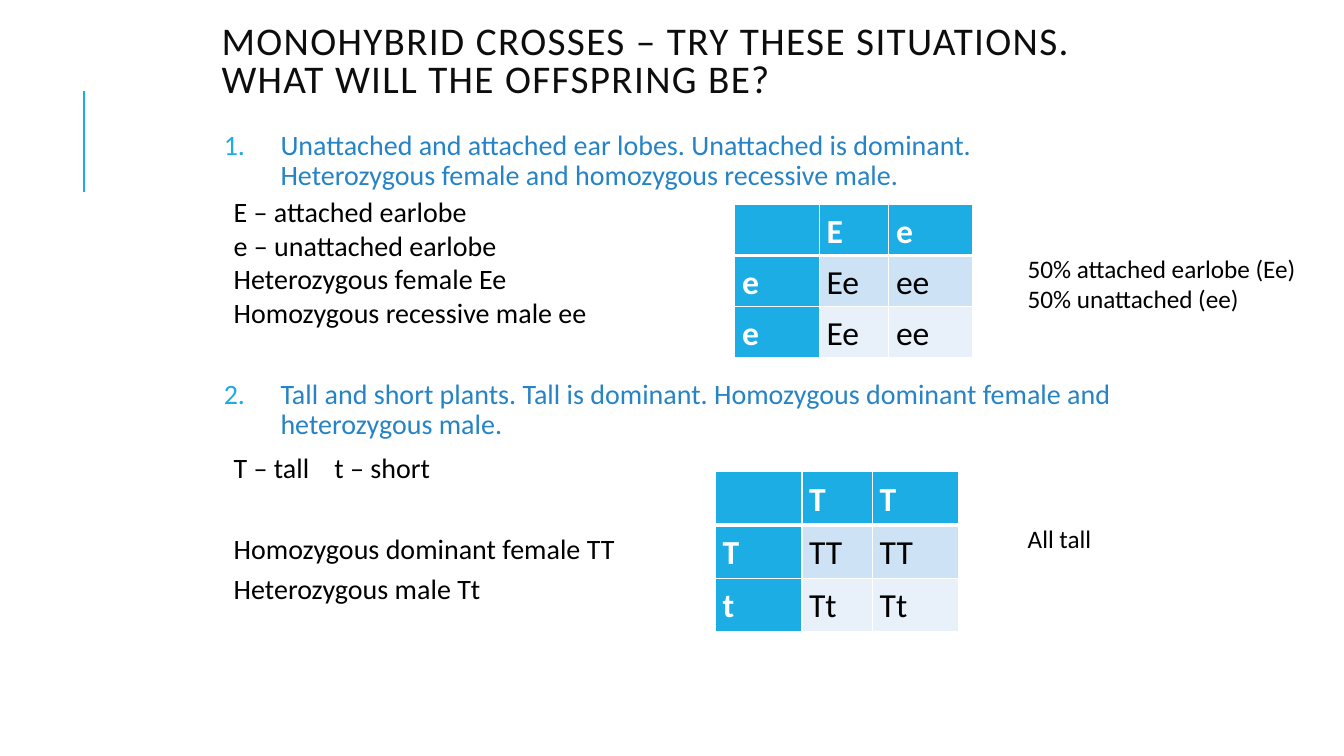
"""Build a slide of two monohybrid cross exercises with Punnett squares."""
import pptx
import pptx.dml.color
import pptx.enum.shapes
import pptx.enum.text
import pptx.oxml
import pptx.oxml.ns
import pptx.util
from pptx.util import Cm, Pt

FONT = "Calibri"
BLUE, DEEP, BLACK, WHITE = "1CADE4", "2683C6", "000000", "FFFFFF"
BANDS = ["CDE3F5", "E8F1FA"]
TITLE = "MONOHYBRID CROSSES – TRY THESE SITUATIONS. WHAT WILL THE OFFSPRING BE?"

# (question, space before, answer line height, [(answer, space before)])
TASKS = [
    ("Unattached and attached ear lobes. Unattached is dominant. "
     "Heterozygous female and homozygous recessive male.", 12, 1.0,
     [("E – attached earlobe", 0), ("e – unattached earlobe", 0),
      ("Heterozygous female Ee", 0), ("Homozygous recessive male ee", 0)]),
    ("Tall and short plants. Tall is dominant. "
     "Homozygous dominant female and heterozygous male.", 36.4, 1.2,
     [("T – tall\tt – short", 0), ("Homozygous dominant female TT", 29.3),
      ("Heterozygous male Tt", 0)]),
]
# (left, top, column widths, row height, cells)
GRIDS = [
    (18.52, 5.16, [2.13, 1.75, 2.11], 1.28,
     [["", "E", "e"], ["e", "Ee", "ee"], ["e", "Ee", "ee"]]),
    (18.03, 11.89, [2.18, 1.78, 2.16], 1.34,
     [["", "T", "T"], ["T", "TT", "TT"], ["t", "Tt", "Tt"]]),
]
# (top, width, height, lines)
RESULTS = [
    (6.25, 7.59, 1.8, ["50% attached earlobe (Ee)", "50% unattached (ee)"]),
    (13.06, 5.59, 1.02, ["All tall"]),
]


def rgb(code):
    """Turn a hex string into a colour."""
    return pptx.dml.color.RGBColor.from_string(code)


def style(para, size, color, bold=False):
    """Format every run of a paragraph."""
    for run in para.runs:
        font = run.font
        font.name, font.size, font.bold = FONT, Pt(size), bold
        font.color.rgb = rgb(color)


def space(para, line, before=0, after=0):
    """Set the line height and the gaps around a paragraph."""
    para.line_spacing = line
    para.space_before, para.space_after = Pt(before), Pt(after)


def add_xml(parent, body):
    """Append one drawing element given as text."""
    tag, rest = body[:-2].split(" ", 1) if " " in body else (body[:-2], "")
    ns = pptx.oxml.ns.nsdecls("a")
    parent.append(pptx.oxml.parse_xml(f"<a:{tag} {ns} {rest}/>"))


def add_box(slide, left, top, width, height):
    """Add a wrapping text box and return its frame."""
    box = slide.shapes.add_textbox(Cm(left), Cm(top), Cm(width), Cm(height))
    box.text_frame.word_wrap = True
    return box.text_frame


def add_title(slide):
    """Place and format the title."""
    title = slide.shapes.title
    title.left, title.top, title.width, title.height = (
        Cm(5.33), Cm(0), Cm(22.86), Cm(3.18))
    frame = title.text_frame
    frame.text = TITLE
    frame.word_wrap = True
    frame.auto_size = pptx.enum.text.MSO_AUTO_SIZE.NONE
    frame.vertical_anchor = pptx.enum.text.MSO_ANCHOR.MIDDLE
    para = frame.paragraphs[0]
    para.alignment = pptx.enum.text.PP_ALIGN.LEFT
    space(para, 0.8)
    style(para, 28, "0D0D0D")
    para.runs[0].font._element.set("spc", "100")


def add_rule(slide):
    """Draw the accent line at the left."""
    rule = slide.shapes.add_connector(
        pptx.enum.shapes.MSO_CONNECTOR.STRAIGHT,
        Cm(2.12), Cm(4.83), Cm(2.12), Cm(2.29))
    rule.line.color.rgb = rgb(BLUE)
    rule.line.width = Pt(1.5)
    add_xml(rule._element.spPr, "effectLst/>")


def add_tasks(slide):
    """Write the numbered questions and their answers."""
    frame = add_box(slide, 5.51, 3.18, 22.86, 15.6)
    frame.margin_left = frame.margin_right = Cm(0.13)
    frame.margin_top = frame.margin_bottom = Cm(0.13)
    texts = []
    for ask, _, _, notes in TASKS:
        texts += [ask] + [note for note, _ in notes]
    frame.text = "\n".join(texts)
    paras = iter(frame.paragraphs)
    for _, gap, line, notes in TASKS:
        para = next(paras)
        space(para, 0.9, gap, 2)
        style(para, 20, DEEP)
        props = para._p.get_or_add_pPr()
        props.set("marL", str(Cm(1.43)))
        props.set("indent", str(-Cm(1.43)))
        color = pptx.oxml.parse_xml(
            f'<a:buClr {pptx.oxml.ns.nsdecls("a")}>'
            f'<a:srgbClr val="{BLUE}"/></a:buClr>')
        props.append(color)
        add_xml(props, 'buAutoNum type="arabicPeriod"/>')
        for note, before in notes:
            para = next(paras)
            space(para, line, before)
            style(para, 20, BLACK)
            props = para._p.get_or_add_pPr()
            props.set("marL", str(Cm(0.25)))
            props.set("indent", "0")
            if "\t" in note:
                props.append(pptx.oxml.parse_xml(
                    f'<a:tabLst {pptx.oxml.ns.nsdecls("a")}>'
                    f'<a:tab pos="{Cm(3.1)}" algn="l"/></a:tabLst>'))


def add_edges(cell, row):
    """Give a cell white borders, thick below the header row."""
    props = cell._tc.get_or_add_tcPr()
    thick = {"T": row == 1, "B": row == 0}
    for side in "LRTB":
        width = Pt(3 if thick.get(side) else 1)
        props.append(pptx.oxml.parse_xml(
            f'<a:ln{side} {pptx.oxml.ns.nsdecls("a")} w="{width}"><a:solidFill>'
            f'<a:srgbClr val="{WHITE}"/></a:solidFill></a:ln{side}>'))


def add_grid(slide, left, top, widths, high, cells):
    """Add one Punnett square."""
    count = len(cells)
    table = slide.shapes.add_table(
        count, len(widths), Cm(left), Cm(top),
        Cm(sum(widths)), Cm(high * count)).table
    table.first_row = table.horz_banding = False
    for col, width in zip(table.columns, widths):
        col.width = Cm(width)
    for r, texts in enumerate(cells):
        table.rows[r].height = Cm(high)
        for c, text in enumerate(texts):
            cell = table.cell(r, c)
            head = r == 0 or c == 0
            cell.margin_left = cell.margin_right = Cm(0.18)
            cell.margin_top, cell.margin_bottom = Cm(0.03), Cm(0)
            add_edges(cell, r)
            cell.fill.solid()
            cell.fill.fore_color.rgb = rgb(BLUE if head else BANDS[r - 1])
            cell.text_frame.text = text
            para = cell.text_frame.paragraphs[0]
            space(para, 1.15, 0, 6)
            style(para, 24, WHITE if head else BLACK, head)


def main():
    """Assemble and save the slide."""
    deck = pptx.Presentation()
    deck.slide_width, deck.slide_height = Cm(33.87), Cm(19.05)
    slide = deck.slides.add_slide(deck.slide_layouts[5])
    add_rule(slide)
    add_title(slide)
    add_tasks(slide)
    for grid in GRIDS:
        add_grid(slide, *grid)
    for top, width, height, lines in RESULTS:
        frame = add_box(slide, 25.65, top, width, height)
        frame.text = "\n".join(lines)
        for para in frame.paragraphs:
            style(para, 18, BLACK)
    deck.save("out.pptx")


if __name__ == "__main__":
    main()
